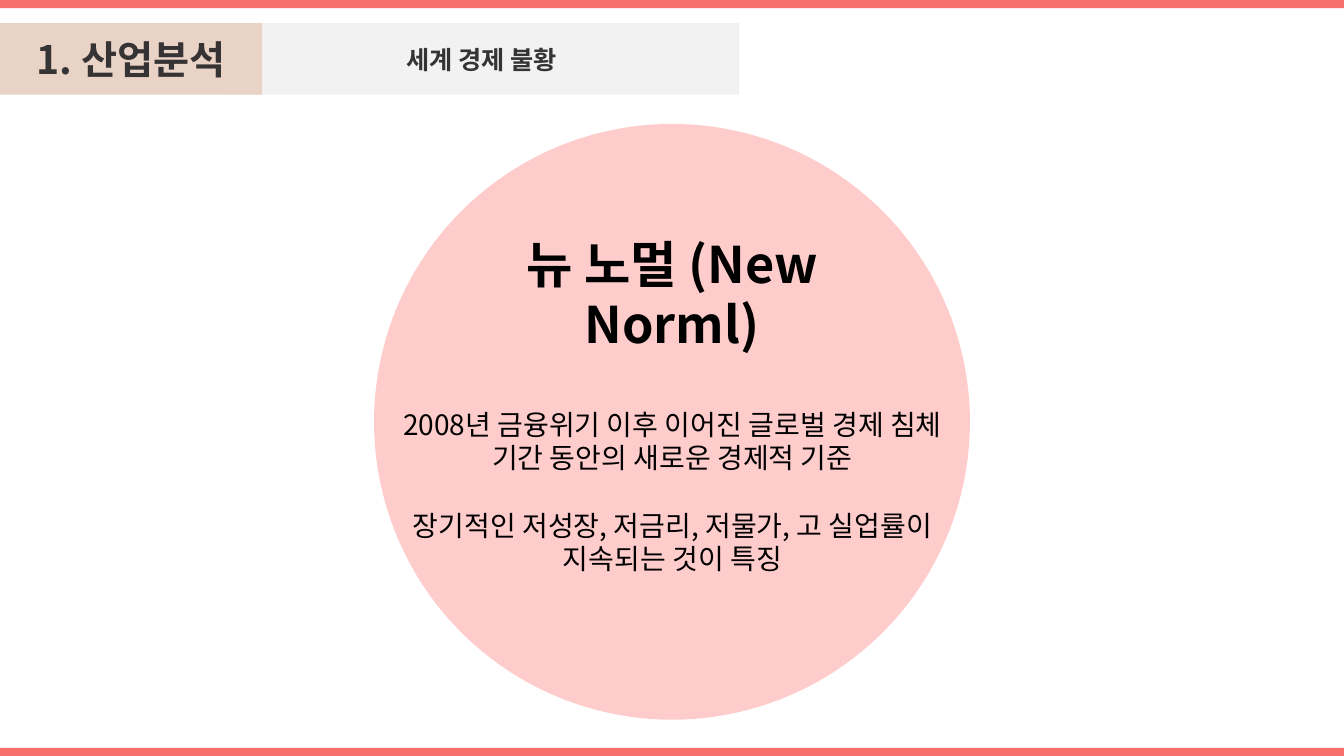
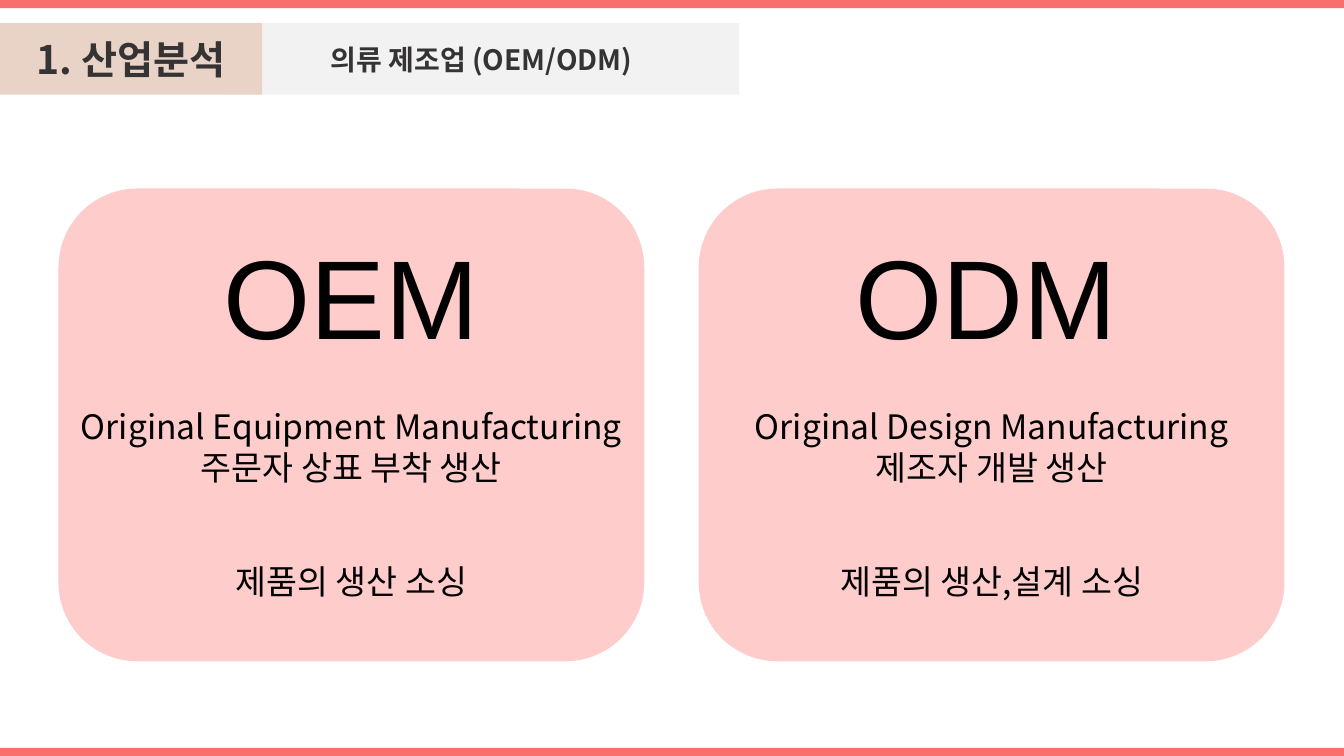
from pptx import Presentation
from pptx.dml.color import RGBColor
from pptx.enum.shapes import MSO_SHAPE as SHAPE
from pptx.enum.text import MSO_ANCHOR as ANCHOR, MSO_AUTO_SIZE as FIT, PP_ALIGN as ALIGN
from pptx.oxml.ns import qn
from pptx.util import Inches, Pt

COLORS = {
    "bar": "F86F6C",
    "section": "E9D3C6",
    "topic": "F2F2F2",
    "panel": "FFCCCC",
    "heading": "353333",
    "body": "000000",
}
KOREAN = "Noto Sans CJK KR"
WIDTH, HEIGHT = 13.33, 7.5
BAR_H = 0.08
CARD_W, CARD_H, CARD_Y = 5.81, 4.69, 1.87


def rgb(name):
    return RGBColor.from_string(COLORS[name])


def write(sp, *lines, size=20, font=KOREAN, color="body", bold=False,
          align=ALIGN.CENTER, anchor=ANCHOR.TOP, gaps=()):
    tf = sp.text_frame
    tf.word_wrap = True
    tf.vertical_anchor = anchor
    for i, line in enumerate(lines):
        p = tf.paragraphs[0] if i == 0 else tf.add_paragraph()
        p.alignment = align
        if i in gaps:
            p.space_before = Pt(size * 1.2)
        r = p.add_run()
        r.text = line
        r.font.size = Pt(size)
        r.font.name = font
        r.font.bold = bold
        r.font.color.rgb = rgb(color)
        ea = r.font._element.makeelement(qn("a:ea"), {"typeface": font})
        r.font._element.find(qn("a:latin")).addnext(ea)


def add_block(shapes, kind, x, y, w, h, fill):
    sp = shapes.add_shape(kind, Inches(x), Inches(y), Inches(w), Inches(h))
    sp.shadow.inherit = False
    sp.fill.solid()
    sp.fill.fore_color.rgb = rgb(fill)
    sp.line.fill.background()
    return sp


def add_text(shapes, x, y, w, h, *lines, grow=True, **fmt):
    sp = shapes.add_textbox(Inches(x), Inches(y), Inches(w), Inches(h))
    write(sp, *lines, **fmt)
    if grow:
        sp.text_frame.auto_size = FIT.SHAPE_TO_FIT_TEXT


def add_slide(prs, topic, topic_size):
    s = prs.slides.add_slide(prs.slide_layouts[6])
    for y in (0, HEIGHT - BAR_H):
        add_block(s.shapes, SHAPE.RECTANGLE, 0, y, WIDTH, BAR_H, "bar")
    header = s.shapes.add_group_shape().shapes
    for x, w, fill, text, size in (
        (2.22, 5.11, "topic", topic, topic_size),
        (0, 2.6, "section", "1. 산업분석", 28),
    ):
        sp = add_block(header, SHAPE.RECTANGLE, x, 0.23, w, 0.71, fill)
        write(sp, text, size=size, color="heading", bold=True, anchor=ANCHOR.MIDDLE)
    return s


def add_card(s, x, name, name_dx, meaning, scope):
    card = s.shapes.add_group_shape().shapes
    add_block(card, SHAPE.ROUNDED_RECTANGLE, x, CARD_Y, CARD_W, CARD_H, "panel")
    add_text(card, x, 3.98, CARD_W, 0.91, *meaning, size=24)
    add_text(card, x + name_dx, 2.21, 2.92, 1.45, name,
             size=80, font="Arial", align=ALIGN.LEFT)
    add_text(card, x + 0.73, 5.52, CARD_W - 1.46, 0.5, scope, size=24)


def add_new_normal(prs):
    s = add_slide(prs, "세계 경제 불황", 18)
    add_block(s.shapes, SHAPE.OVAL, 3.71, 1.23, 5.91, 5.91, "panel")
    add_text(s.shapes, 4.26, 2.49, 4.81, 0.84, "뉴 노멀 (New Norml)",
             size=36, bold=True, anchor=ANCHOR.MIDDLE, grow=False)
    add_text(s.shapes, 3.53, 3.99, 6.28, 1.78,
             "2008년 금융위기 이후 이어진 글로벌 경제 침체",
             "기간 동안의 새로운 경제적 기준",
             "장기적인 저성장, 저금리, 저물가, 고 실업률이 지속되는 것이 특징",
             gaps=(2,))


def add_manufacturing(prs):
    s = add_slide(prs, "의류 제조업 (OEM/ODM)", 20)
    add_card(s, 0.58, "OEM", 1.54,
             ("Original Equipment Manufacturing", "주문자 상표 부착 생산"),
             "제품의 생산 소싱")
    add_card(s, 6.93, "ODM", 1.46,
             ("Original Design Manufacturing", "제조자 개발 생산"),
             "제품의 생산,설계 소싱")


def main():
    prs = Presentation()
    prs.slide_width, prs.slide_height = Inches(WIDTH), Inches(HEIGHT)
    add_new_normal(prs)
    add_manufacturing(prs)
    prs.save("out.pptx")


if __name__ == "__main__":
    main()
